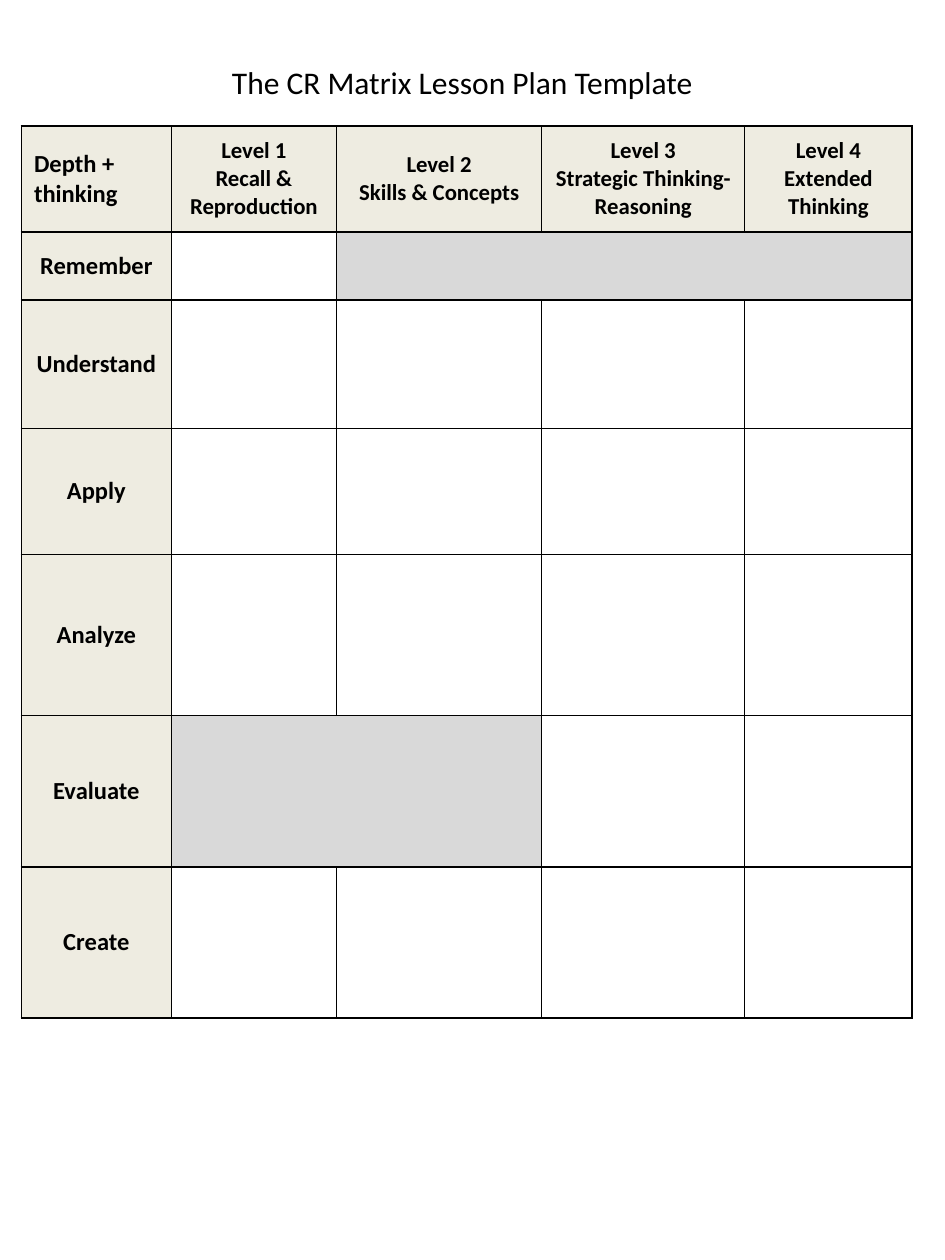
from dataclasses import dataclass

from lxml.etree import SubElement
from pptx import Presentation
from pptx.dml.color import RGBColor
from pptx.enum.text import MSO_ANCHOR, PP_ALIGN
from pptx.oxml.ns import qn
from pptx.table import Table, _Cell
from pptx.text.text import TextFrame
from pptx.util import Inches, Pt

BLACK, CREAM, GREY = "000000", "EEECE1", "D9D9D9"
COL_WIDTHS = [1.19, 1.31, 1.63, 1.61, 1.33]


@dataclass
class Level:
    """A header cell: paragraphs split by \\n, line breaks marked by \\v."""
    text: str
    size: int = 13
    align: PP_ALIGN = PP_ALIGN.CENTER


@dataclass
class Stage:
    name: str
    height: float
    blocked: tuple[int, int] | None = None  # first and last greyed column


LEVELS = [
    Level("Depth +\nthinking", 14, PP_ALIGN.LEFT),
    Level("Level 1\vRecall & Reproduction"),
    Level("Level 2\vSkills & Concepts"),
    Level("Level 3\nStrategic Thinking- Reasoning"),
    Level("Level 4\nExtended Thinking"),
]
HEADER_HEIGHT = 0.84
STAGES = [
    Stage("Remember", 0.54, (2, 4)),
    Stage("Understand", 1.02),
    Stage("Apply", 1.0),
    Stage("Analyze", 1.28),
    Stage("Evaluate", 1.2, (1, 2)),
    Stage("Create", 1.2),
]


def rgb(color: str) -> RGBColor:
    return RGBColor.from_string(color)


def write(tf: TextFrame, text: str, *, size: int, bold: bool = False,
          align: PP_ALIGN = PP_ALIGN.CENTER, color: str = BLACK) -> None:
    tf.text = text
    tf.word_wrap = True
    for p in tf.paragraphs:
        p.alignment = align
        for r in p.runs:
            r.font.name = "Calibri"
            r.font.size = Pt(size)
            r.font.bold = bold
            r.font.color.rgb = rgb(color)


def fill_cell(cell: _Cell, color: str) -> None:
    cell.fill.solid()
    cell.fill.fore_color.rgb = rgb(color)


def add_borders(cell: _Cell, color: str = BLACK, width: float = 1) -> None:
    tc_pr = cell._tc.get_or_add_tcPr()
    for i, side in enumerate(("lnL", "lnR", "lnT", "lnB")):
        ln = SubElement(tc_pr, qn(f"a:{side}"), w=str(Pt(width)))
        SubElement(SubElement(ln, qn("a:solidFill")), qn("a:srgbClr"), val=color)
        tc_pr.insert(i, ln)  # borders come before the fill


def label_cell(cell: _Cell, text: str, size: int = 14,
               align: PP_ALIGN = PP_ALIGN.CENTER) -> None:
    fill_cell(cell, CREAM)
    cell.vertical_anchor = MSO_ANCHOR.MIDDLE
    write(cell.text_frame, text, size=size, bold=True, align=align)


def fill_matrix(table: Table) -> None:
    table.first_row = table.horz_banding = False
    for column, width in zip(table.columns, COL_WIDTHS):
        column.width = Inches(width)
    heights = [HEADER_HEIGHT] + [stage.height for stage in STAGES]
    for row, height in zip(table.rows, heights):
        row.height = Inches(height)
        for cell in row.cells:
            cell.fill.background()
            add_borders(cell)

    for col, level in enumerate(LEVELS):
        label_cell(table.cell(0, col), level.text, level.size, level.align)
    for row, stage in enumerate(STAGES, start=1):
        label_cell(table.cell(row, 0), stage.name)
        if stage.blocked:
            first, last = stage.blocked
            table.cell(row, first).merge(table.cell(row, last))
            fill_cell(table.cell(row, first), GREY)


def main() -> None:
    prs = Presentation()
    prs.slide_width, prs.slide_height = Inches(7.5), Inches(10)
    s = prs.slides.add_slide(prs.slide_layouts[5])

    height = HEADER_HEIGHT + sum(stage.height for stage in STAGES)
    frame = s.shapes.add_table(len(STAGES) + 1, len(LEVELS), Inches(0.17), Inches(1),
                               Inches(sum(COL_WIDTHS)), Inches(height))
    fill_matrix(frame.table)

    title = s.shapes.title
    title.left, title.top = Inches(0.17), Inches(0.19)
    title.width, title.height = Inches(7), Inches(0.92)
    title.text_frame.vertical_anchor = MSO_ANCHOR.MIDDLE
    write(title.text_frame, "The CR Matrix Lesson Plan Template", size=18)

    prs.save("out.pptx")


if __name__ == "__main__":
    main()
